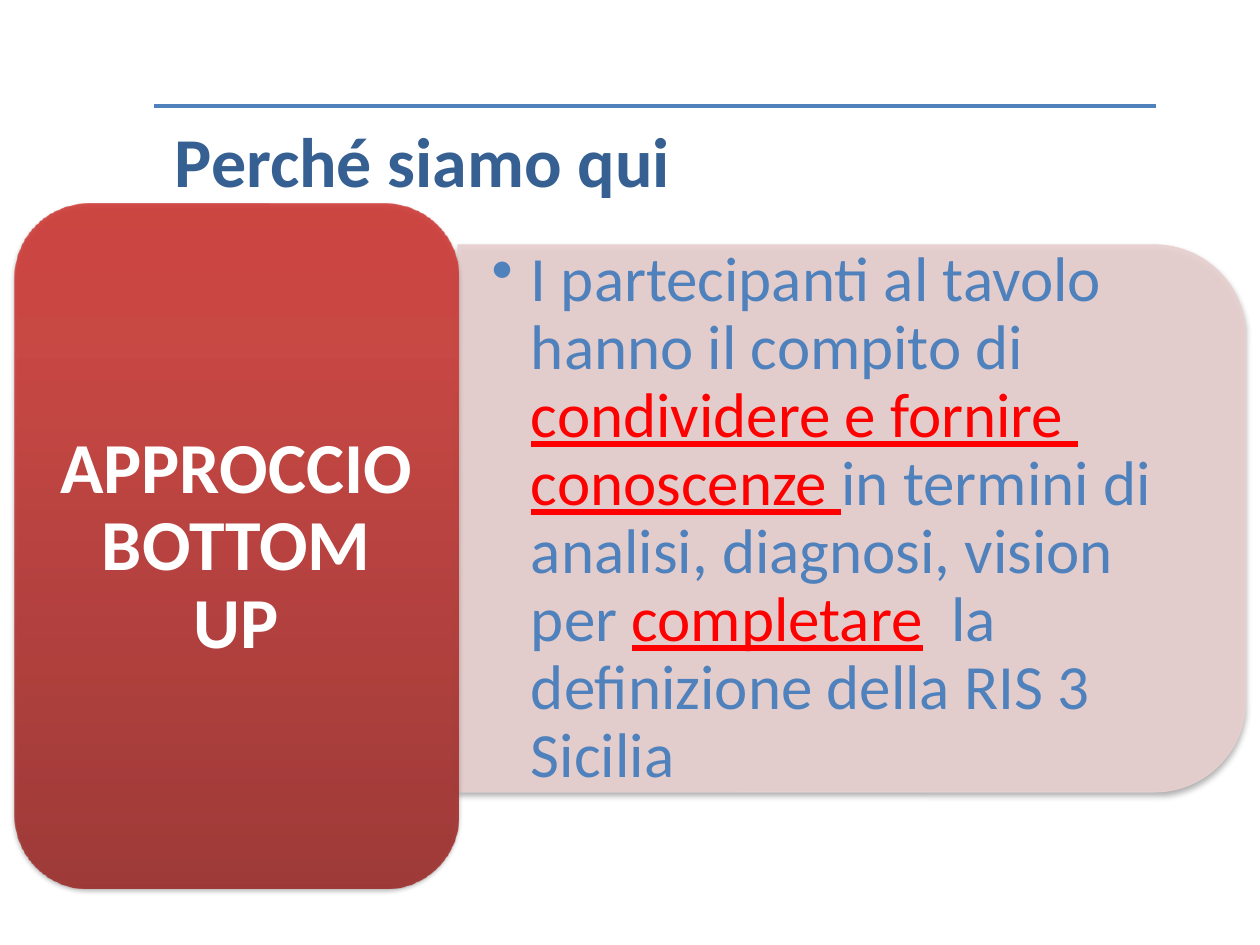
from typing import NamedTuple

from lxml.etree import SubElement
from pptx import Presentation
from pptx.dml.color import RGBColor
from pptx.enum.shapes import MSO_CONNECTOR, MSO_SHAPE as Preset
from pptx.enum.text import MSO_ANCHOR as Anchor, PP_ALIGN as Align
from pptx.oxml.ns import qn
from pptx.util import Pt

COLORS = {
    "rule": "4F81BD", "title": "376092", "body": "4F81BD", "accent": "FF0000",
    "panel": "E8D0D0", "label": "FFFFFF", "shadow": "000000",
}
CARD_STOPS = [(0, "9C2F2D"), (80, "CB3E3A"), (100, "CE3B37")]
FONT = "Calibri"
OPACITY = 90


class Box(NamedTuple):
    left: float
    top: float
    width: float
    height: float

    def lengths(self) -> list:
        return [Pt(value) for value in self]


class Span(NamedTuple):
    text: str
    color: str
    bold: bool = False
    underline: bool = False


TITLE = [Span("Perché siamo qui", "title", bold=True)]
LABEL = [Span("APPROCCIO BOTTOM UP", "label", bold=True)]
TASK = [
    Span("I partecipanti al tavolo hanno il compito di ", "body"),
    Span("condividere e fornire  conoscenze ", "accent", underline=True),
    Span("in termini di analisi, diagnosi, vision per ", "body"),
    Span("completare", "accent", underline=True),
    Span("  la definizione della RIS 3 Sicilia", "body"),
]


def add_color(parent, value: str, opacity: int) -> None:
    color = SubElement(parent, qn("a:srgbClr"), val=value)
    SubElement(color, qn("a:alpha"), val=str(opacity * 1000))


def add_preset(slide, preset, box: Box, rotation: float = 0):
    """Add a preset shape with a soft shadow falling straight down."""
    shape = slide.shapes.add_shape(preset, *box.lengths())
    shape.rotation = rotation
    shape.shadow.inherit = False
    effects = shape._element.spPr.find(qn("a:effectLst"))
    shadow = SubElement(
        effects, qn("a:outerShdw"), blurRad=str(Pt(3.1)), dist=str(Pt(1.8)),
        dir="5400000", rotWithShape="0")
    add_color(shadow, COLORS["shadow"], 35)
    return shape


def make_translucent(fill) -> None:
    color = fill._xPr.find(qn("a:solidFill"))[0]
    SubElement(color, qn("a:alpha"), val=str(OPACITY * 1000))


def write_text(frame, spans: list[Span], size: float, insets: tuple[float, float],
               anchor=Anchor.MIDDLE, align=Align.LEFT, bullet_indent: float = 0) -> None:
    side, edge = insets
    frame.word_wrap = True
    frame.vertical_anchor = anchor
    frame.margin_left = frame.margin_right = Pt(side)
    frame.margin_top = frame.margin_bottom = Pt(edge)
    paragraph = frame.paragraphs[0]
    paragraph.alignment = align
    paragraph.line_spacing = 0.9
    if bullet_indent:
        props = paragraph._p.get_or_add_pPr()
        props.set("marL", str(Pt(bullet_indent)))
        props.set("indent", str(-Pt(bullet_indent)))
        SubElement(props, qn("a:buChar"), char="•")
    for span in spans:
        run = paragraph.add_run()
        run.text = span.text
        run.font.name = FONT
        run.font.size = Pt(size)
        run.font.bold = span.bold
        run.font.underline = span.underline
        run.font.color.rgb = RGBColor.from_string(COLORS[span.color])


def main() -> None:
    deck = Presentation()
    deck.slide_width, deck.slide_height = Pt(720), Pt(540)
    slide = deck.slides.add_slide(deck.slide_layouts[5])

    # Title under its rule
    title_box = Box(88, 60.5, 572.4, 57)
    rule = slide.shapes.add_connector(
        MSO_CONNECTOR.STRAIGHT, Pt(title_box.left), Pt(title_box.top),
        Pt(title_box.left + title_box.width), Pt(title_box.top))
    rule.line.color.rgb = RGBColor.from_string(COLORS["rule"])
    rule.line.width = Pt(2)
    SubElement(rule._element.spPr, qn("a:effectLst"))
    title = slide.shapes.title
    title.left, title.top, title.width, title.height = title_box.lengths()
    write_text(title.text_frame, TITLE, 40, (12, 12), anchor=Anchor.TOP)

    # Task panel, rounded on its right side
    panel = add_preset(slide, Preset.ROUND_2_SAME_RECTANGLE,
                       Box(330.5, 71.3, 312.5, 450), rotation=90)
    for fill in (panel.fill, panel.line.fill):
        fill.solid()
        fill.fore_color.rgb = RGBColor.from_string(COLORS["panel"])
        make_translucent(fill)
    panel.line.width = Pt(0.75)
    task = slide.shapes.add_textbox(*Box(261.4, 155.5, 434.9, 282.2).lengths())
    write_text(task.text_frame, TASK, 36, (19.5, 9.75), bullet_indent=22.5)

    # Approach card with a vertical gradient
    card = add_preset(slide, Preset.ROUNDED_RECTANGLE, Box(8.4, 116.6, 253.4, 391))
    card.line.fill.background()
    card.fill.gradient()
    card.fill.gradient_angle = 90
    stops = card._element.spPr.find(qn("a:gradFill")).find(qn("a:gsLst"))
    for stop in list(stops):
        stops.remove(stop)
    for position, value in CARD_STOPS:
        stop = SubElement(stops, qn("a:gs"), pos=str(position * 1000))
        add_color(stop, value, OPACITY)
    label = slide.shapes.add_textbox(*Box(20.9, 129.6, 228.2, 366.5).lengths())
    write_text(label.text_frame, LABEL, 41, (12.3, 6.15), align=Align.CENTER)

    deck.save("out.pptx")


if __name__ == "__main__":
    main()
